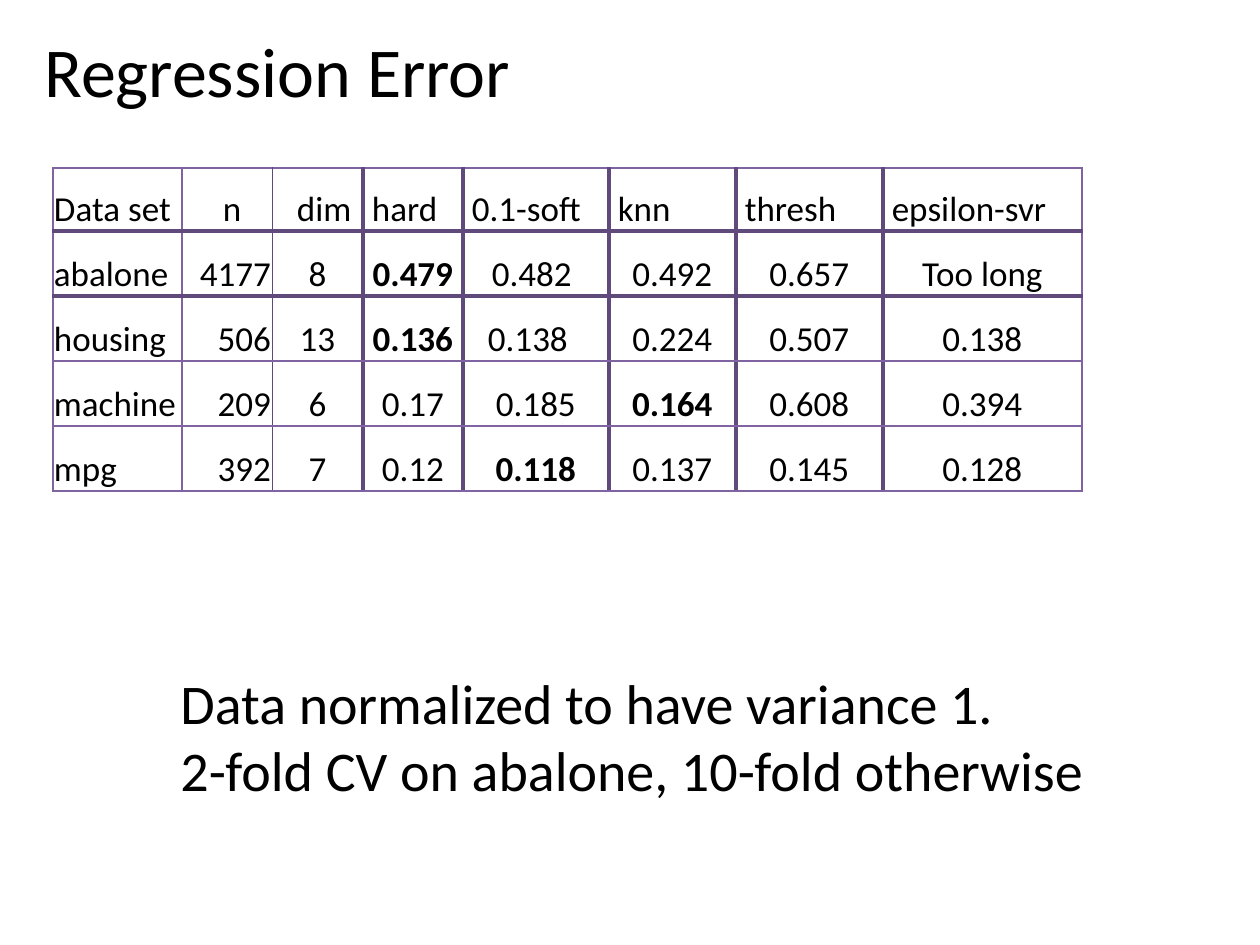
from dataclasses import dataclass

from lxml import etree
from pptx import Presentation, util as u
from pptx.dml.color import RGBColor
from pptx.enum import text
from pptx.oxml.ns import qn

PX = 914400 / 126
ALIGN = text.PP_ALIGN


@dataclass(frozen=True)
class Theme:
    """Colours, font and type sizes of the slide."""
    font: str = "Calibri"
    ink: str = "000000"
    thin: tuple = ("8064A2", 1)
    thick: tuple = ("604A7B", 3)
    hairline: tuple = ("604A7B", 0.25)
    title: int = 40
    note: int = 32
    cell: int = 20


THEME = Theme()
HEADER = ["Data set", "n", "dim", "hard", "0.1-soft", "knn", "thresh", "epsilon-svr"]
RESULTS = [
    ["abalone", "4177", "8", "0.479", "0.482", "0.492", "0.657", "Too long"],
    ["housing", "506", "13", "0.136", "0.138", "0.224", "0.507", "0.138"],
    ["machine", "209", "6", "0.17", "0.185", "0.164", "0.608", "0.394"],
    ["mpg", "392", "7", "0.12", "0.118", "0.137", "0.145", "0.128"],
]
COL_WIDTHS = [129, 90, 91, 100, 146, 127, 147, 199]
ROW_HEIGHTS = [63, 65, 65, 65, 65]
FIRST_METHOD = 3
HEADER_INDENTS = [0, 40, 24, 8, 8, 8, 8, 8]
RIGHT_INDENTS = {(1, 4): 8, (2, 4): 16}


def px(n):
    """Convert pixels to EMU."""
    return u.Emu(round(n * PX))


def style(p, size, bold=False, align=ALIGN.LEFT):
    """Set the font and alignment of a paragraph."""
    p.alignment = align
    p.font.name = THEME.font
    p.font.size = u.Pt(size)
    p.font.bold = bold
    p.font.color.rgb = RGBColor.from_string(THEME.ink)


def add_text(s, box, lines, size):
    """Place one paragraph per line in an unwrapped text box."""
    tf = s.shapes.add_textbox(*map(px, box)).text_frame
    tf.word_wrap = False
    tf.auto_size = text.MSO_AUTO_SIZE.SHAPE_TO_FIT_TEXT
    tf.text = "\n".join(lines)
    for p in tf.paragraphs:
        style(p, size)


def set_borders(cell, **edges):
    """Draw the cell's edges, given in the order L, R, T, B."""
    tcPr = cell._tc.get_or_add_tcPr()
    for i, (side, (color, width)) in enumerate(edges.items()):
        ln = etree.Element(qn(f"a:ln{side}"), w=str(u.Pt(width)))
        fill = etree.SubElement(ln, qn("a:solidFill"))
        etree.SubElement(fill, qn("a:srgbClr"), val=color)
        tcPr.insert(i, ln)


def column_edge(c):
    """Return the line on the left of column c."""
    if FIRST_METHOD <= c < len(HEADER):
        return THEME.thick
    return THEME.hairline if c == 2 else THEME.thin


def row_edge(r):
    """Return the line on top of row r."""
    return THEME.thick if r in (1, 2) else THEME.thin


def fill_cell(cell, r, c, value, bold):
    """Write and format one table cell."""
    cell.text = value
    cell.fill.background()
    cell.vertical_anchor = text.MSO_ANCHOR.BOTTOM
    cell.margin_left = px(1 + (HEADER_INDENTS[c] if r == 0 else 0))
    cell.margin_right = px(1 + RIGHT_INDENTS.get((r, c), 0))
    cell.margin_top, cell.margin_bottom = px(1), 0
    if r == 0 or c == 0:
        align = ALIGN.LEFT
    else:
        align = ALIGN.RIGHT if c == 1 else ALIGN.CENTER
    style(cell.text_frame.paragraphs[0], THEME.cell, bold, align)
    set_borders(cell, L=column_edge(c), R=column_edge(c + 1),
                T=row_edge(r), B=row_edge(r + 1))


def add_error_table(s, left, top):
    """Place the error table, with the lowest error of each data set in bold."""
    rows = [HEADER] + RESULTS
    size = sum(COL_WIDTHS), sum(ROW_HEIGHTS)
    table = s.shapes.add_table(len(rows), len(HEADER),
                               *map(px, (left, top, *size))).table
    table.first_row = table.horz_banding = False
    for column, width in zip(table.columns, COL_WIDTHS):
        column.width = px(width)
    for row, height in zip(table.rows, ROW_HEIGHTS):
        row.height = px(height)
    for r, values in enumerate(rows):
        best = min(values[FIRST_METHOD:])
        for c, value in enumerate(values):
            bold = r > 0 and c >= FIRST_METHOD and value == best
            fill_cell(table.cell(r, c), r, c, value, bold)


def main():
    """Build and save the slide."""
    prs = Presentation()
    prs.slide_width, prs.slide_height = px(1260), px(945)
    s = prs.slides.add_slide(prs.slide_layouts[6])
    add_text(s, (32, 21, 496, 97), ["Regression Error"], THEME.title)
    add_error_table(s, 53, 168)
    add_text(s, (168, 662, 939, 149),
             ["Data normalized to have variance 1.",
              "2-fold CV on abalone, 10-fold otherwise"], THEME.note)
    prs.save("out.pptx")


if __name__ == "__main__":
    main()
